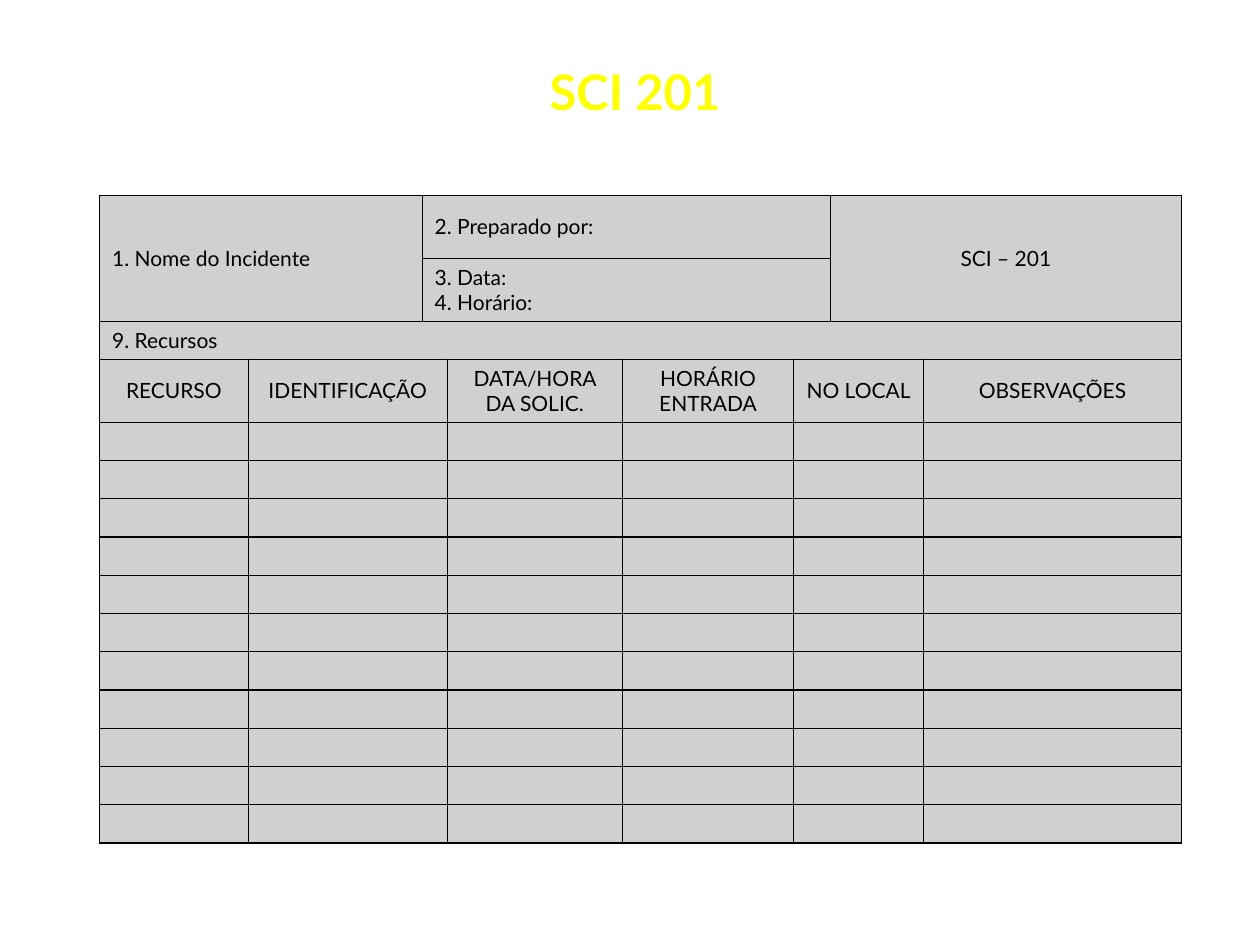
from lxml.etree import SubElement
from pptx import Presentation
from pptx.dml.color import RGBColor
from pptx.enum.text import MSO_ANCHOR as Anchor, MSO_AUTO_SIZE as AutoSize, PP_ALIGN as Align
from pptx.oxml import parse_xml
from pptx.oxml.ns import nsdecls, qn
from pptx.util import Inches, Pt

YELLOW = RGBColor(0xFF, 0xFF, 0x00)
BLACK = RGBColor(0x00, 0x00, 0x00)
GRAY = RGBColor(0xD0, 0xD0, 0xD0)
FONT = "Lato"
COLUMNS = [1.18, 1.38, 0.2, 1.39, 1.36, 0.29, 0.74, 2.05]
BLANK_ROWS = 11
ROWS = [0.5, 0.5, 0.3, 0.5] + [0.3] * BLANK_ROWS


def style_runs(paragraph, size, color, bold=False):
    for run in paragraph.runs:
        run.font.name = FONT
        run.font.size = Pt(size)
        run.font.bold = bold
        run.font.color.rgb = color


def add_borders(cell):
    properties = cell._tc.get_or_add_tcPr()
    for side in ("lnL", "lnR", "lnT", "lnB"):
        properties.append(parse_xml(
            f'<a:{side} {nsdecls("a")} w="{Pt(0.75)}"><a:solidFill>'
            f'<a:srgbClr val="{BLACK}"/></a:solidFill></a:{side}>'))


deck = Presentation()
deck.slide_width, deck.slide_height = Inches(10), Inches(7.5)
slide = deck.slides.add_slide(deck.slide_layouts[5])

heading = slide.shapes.title
heading.left, heading.top = Inches(1.93), Inches(0.44)
heading.width, heading.height = Inches(6.22), Inches(0.57)
heading.text_frame.text = "SCI 201"
heading.text_frame.auto_size = AutoSize.NONE
heading.text_frame.vertical_anchor = Anchor.MIDDLE
heading.text_frame.paragraphs[0].alignment = Align.CENTER
style_runs(heading.text_frame.paragraphs[0], 28, YELLOW, bold=True)

form = slide.shapes.add_table(
    len(ROWS), len(COLUMNS), Inches(0.79), Inches(1.55),
    Inches(sum(COLUMNS)), Inches(sum(ROWS))).table
form.first_row = form.horz_banding = False
for column, width in zip(form.columns, COLUMNS):
    column.width = Inches(width)
for row, height in zip(form.rows, ROWS):
    row.height = Inches(height)

entries = [
    (0, 0, 2, 2, "1. Nome do Incidente", Align.LEFT),
    (0, 2, 1, 4, "2. Preparado por:", Align.LEFT),
    (0, 6, 2, 2, "SCI – 201", Align.CENTER),
    (1, 2, 1, 4, "3. Data:\n4. Horário:", Align.LEFT),
    (2, 0, 1, 8, "9. Recursos", Align.LEFT),
]
resource_columns = [
    (0, 1, "RECURSO"),
    (1, 2, "IDENTIFICAÇÃO"),
    (3, 1, "DATA/HORA DA SOLIC."),
    (4, 1, "HORÁRIO ENTRADA"),
    (5, 2, "NO LOCAL"),
    (7, 1, "OBSERVAÇÕES"),
]
for start, span, label in resource_columns:
    entries.append((3, start, 1, span, label, Align.CENTER))
    for blank in range(4, 4 + BLANK_ROWS):
        entries.append((blank, start, 1, span, "", Align.LEFT))

for top, left, height, width, label, alignment in entries:
    field = form.cell(top, left)
    if height * width > 1:
        field.merge(form.cell(top + height - 1, left + width - 1))
    field.text_frame.text = label
    for line in field.text_frame.paragraphs:
        line.alignment = alignment
        style_runs(line, 12, BLACK)

for cell in form.iter_cells():
    add_borders(cell)
    cell.fill.solid()
    cell.fill.fore_color.rgb = GRAY
    cell.vertical_anchor = Anchor.MIDDLE
    for line in cell.text_frame.paragraphs:
        if not line.runs:
            SubElement(line._p, qn("a:endParaRPr"), sz="1200")

deck.save("out.pptx")
